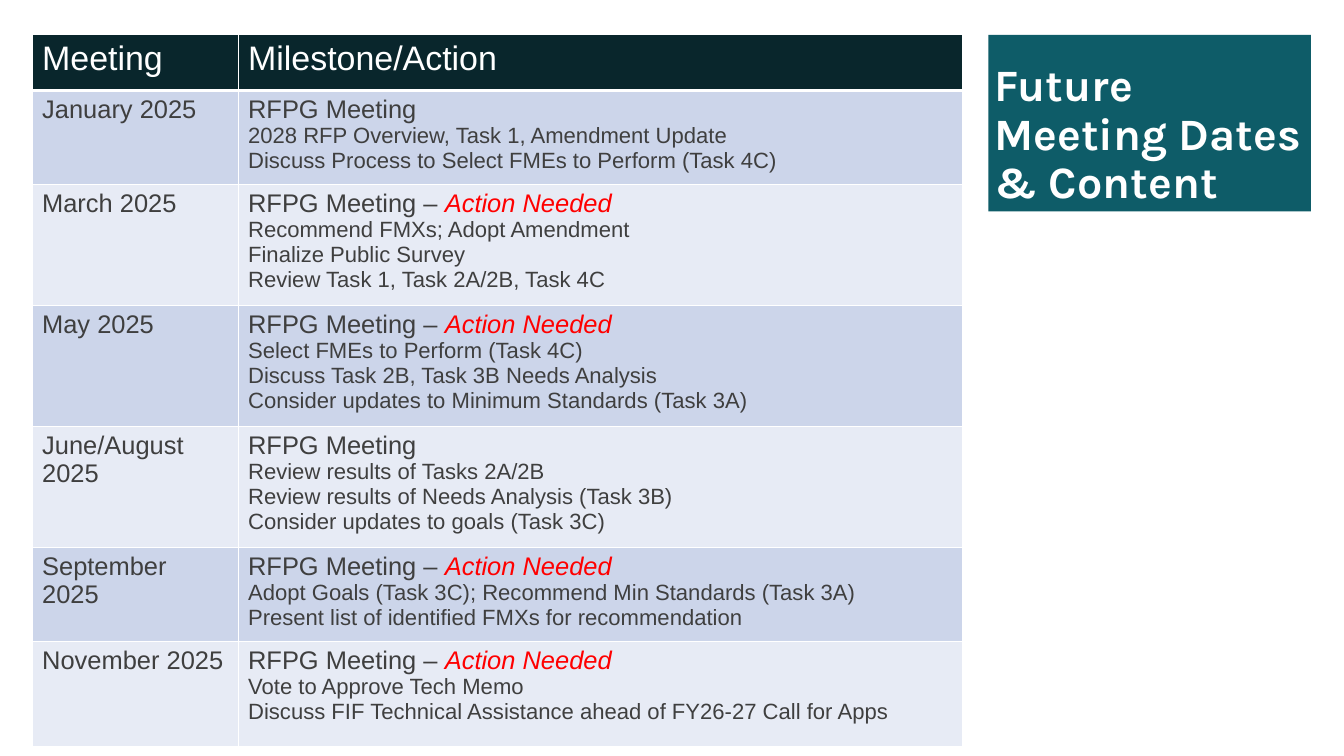
from lxml.etree import SubElement
from pptx import Presentation
from pptx.dml.color import RGBColor
from pptx.enum.text import MSO_ANCHOR, MSO_AUTO_SIZE, PP_ALIGN
from pptx.oxml.ns import qn
from pptx.util import Inches, Pt

WHITE, TEAL, DARK_TEAL = "FFFFFF", "0E5C68", "09262C"
GREY, RED = "3F3F3F", "FF0000"
BAND_FILLS = ["CCD5EA", "E7EBF5"]

COLUMN_WIDTHS = [3.37, 11.85]
ROW_HEIGHTS = [0.91, 1.54, 1.98, 1.98, 1.98, 1.54, 1.72]

# Month, whether action is needed, agenda lines
MEETINGS = [
    ("January 2025", False, ["2028 RFP Overview, Task 1, Amendment Update",
                             "Discuss Process to Select FMEs to Perform (Task 4C)"]),
    ("March 2025", True, ["Recommend FMXs; Adopt Amendment",
                          "Finalize Public Survey",
                          "Review Task 1, Task 2A/2B, Task 4C"]),
    ("May 2025", True, ["Select FMEs to Perform (Task 4C)",
                        "Discuss Task 2B, Task 3B Needs Analysis",
                        "Consider updates to Minimum Standards (Task 3A)"]),
    ("June/August 2025", False, ["Review results of Tasks 2A/2B",
                                 "Review results of Needs Analysis (Task 3B)",
                                 "Consider updates to goals (Task 3C)"]),
    ("September 2025", True, ["Adopt Goals (Task 3C); Recommend Min Standards (Task 3A)",
                              "Present list of identified FMXs for recommendation"]),
    ("November 2025", True, ["Vote to Approve Tech Memo",
                             "Discuss FIF Technical Assistance ahead of FY26-27 Call for Apps"]),
]


def color(hex_string):
    return RGBColor.from_string(hex_string)


def fill_solid(target, hex_string):
    target.fill.solid()
    target.fill.fore_color.rgb = color(hex_string)


def add_text(paragraph, text, size=30, hex_string=GREY, font="Arial", bold=False, italic=False):
    run = paragraph.add_run()
    run.text = text
    run.font.size = Pt(size)
    run.font.name = font
    run.font.bold = bold
    run.font.italic = italic
    run.font.color.rgb = color(hex_string)


def set_borders(cell, bottom_width=1):
    properties = cell._tc.get_or_add_tcPr()
    for side, width in [("L", 1), ("R", 1), ("T", 1), ("B", bottom_width)]:
        line = SubElement(properties, qn(f"a:ln{side}"), w=str(Pt(width)))
        solid = SubElement(line, qn("a:solidFill"))
        SubElement(solid, qn("a:srgbClr"), val=WHITE)


def format_cell(cell, hex_string, bottom_width=1):
    cell.margin_left = cell.margin_right = Inches(0.16)
    cell.margin_top = cell.margin_bottom = Inches(0.08)
    set_borders(cell, bottom_width)
    fill_solid(cell, hex_string)


def add_title(slide):
    title = slide.shapes.title
    title.left, title.top = Inches(16.17), Inches(0.57)
    title.width, title.height = Inches(5.28), Inches(2.89)
    fill_solid(title, TEAL)
    frame = title.text_frame
    frame.word_wrap = True
    frame.auto_size = MSO_AUTO_SIZE.NONE
    frame.vertical_anchor = MSO_ANCHOR.BOTTOM
    paragraph = frame.paragraphs[0]
    paragraph.alignment = PP_ALIGN.LEFT
    paragraph.line_spacing = 0.9
    add_text(paragraph, "Future Meeting Dates & Content",
             size=52.8, hex_string=WHITE, font="Karla", bold=True)


def add_meeting_row(month_cell, action_cell, meeting):
    month, action_needed, agenda = meeting
    add_text(month_cell.text_frame.paragraphs[0], month)
    frame = action_cell.text_frame
    heading = frame.paragraphs[0]
    if action_needed:
        add_text(heading, "RFPG Meeting – ")
        add_text(heading, "Action Needed", hex_string=RED, italic=True)
    else:
        add_text(heading, "RFPG Meeting")
    for item in agenda:
        add_text(frame.add_paragraph(), item, size=26)


def add_schedule(slide):
    table = slide.shapes.add_table(
        len(ROW_HEIGHTS), len(COLUMN_WIDTHS), Inches(0.53), Inches(0.57),
        Inches(sum(COLUMN_WIDTHS)), Inches(sum(ROW_HEIGHTS))).table
    for column, width in zip(table.columns, COLUMN_WIDTHS):
        column.width = Inches(width)
    for row, height in zip(table.rows, ROW_HEIGHTS):
        row.height = Inches(height)

    # Header row
    for cell, heading in zip(table.rows[0].cells, ["Meeting", "Milestone/Action"]):
        format_cell(cell, DARK_TEAL, bottom_width=3)
        add_text(cell.text_frame.paragraphs[0], heading, size=40, hex_string=WHITE)

    # One banded row per meeting
    for index, meeting in enumerate(MEETINGS):
        month_cell, action_cell = table.rows[index + 1].cells
        for cell in (month_cell, action_cell):
            format_cell(cell, BAND_FILLS[index % 2])
        add_meeting_row(month_cell, action_cell, meeting)


def main():
    presentation = Presentation()
    presentation.slide_width = Inches(21.99)
    presentation.slide_height = Inches(12.37)
    slide = presentation.slides.add_slide(presentation.slide_layouts[5])
    add_title(slide)
    add_schedule(slide)
    presentation.save("out.pptx")


if __name__ == "__main__":
    main()
